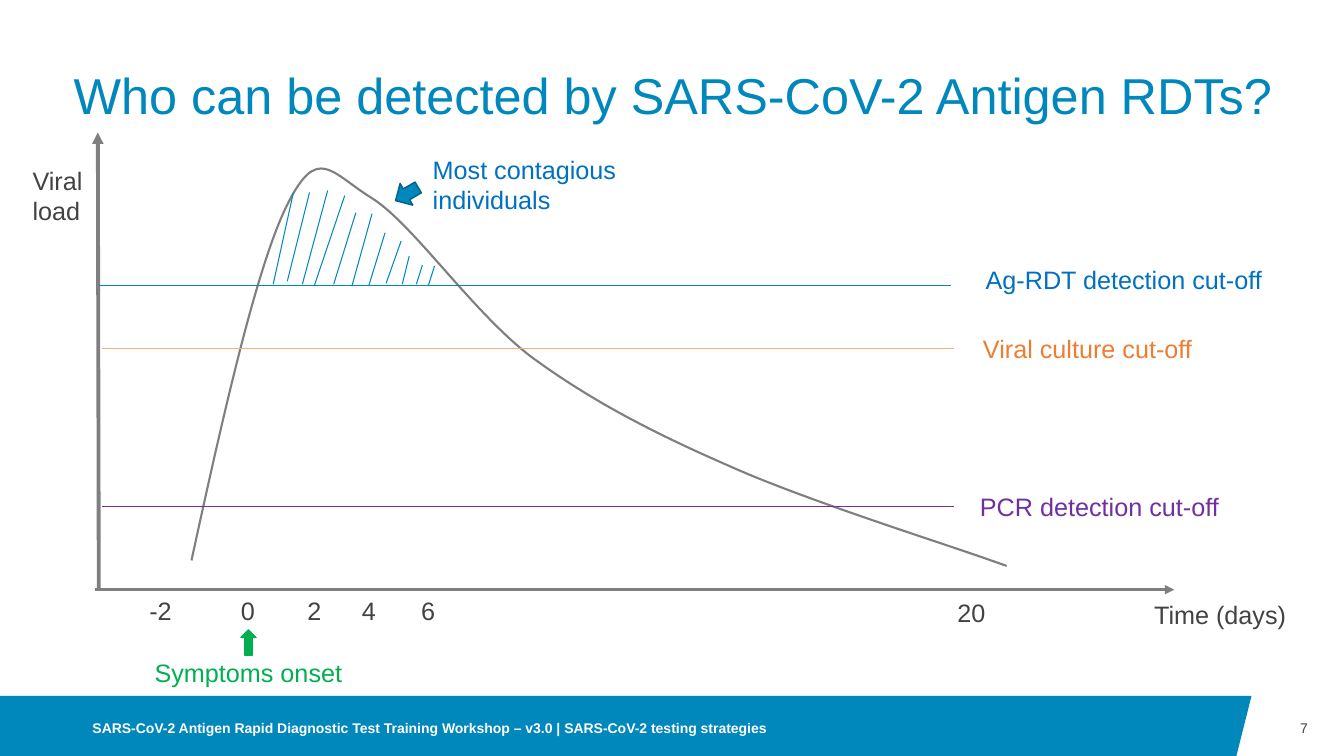
from pptx import Presentation
from pptx.dml.color import RGBColor
from pptx.enum.shapes import MSO_CONNECTOR, MSO_SHAPE
from pptx.enum.text import MSO_ANCHOR as ANCHOR, MSO_AUTO_SIZE, PP_ALIGN as ALIGN
from pptx.oxml.ns import qn
from pptx.util import Inches, Pt
from lxml.etree import SubElement

W, H = Inches(13.333), Inches(7.5)
BLUE, LABEL_BLUE, DARK, GRAY = "0087BC", "0070C0", "424242", "7F7F7F"
GREEN, ORANGE, PURPLE, WHITE = "00B050", "ED7D31", "7030A0", "FFFFFF"

CURVE_BOX = [(14.25, 22.27), (74.93, 74.8)]
CURVE_START = (14.25, 74.13)
CURVE = [
    ((16.65, 54.53), (19.13, 35.07), (21.38, 27.07)),
    ((23.63, 19.07), (24.6, 22.8), (27.6, 26.13)),
    ((30.68, 29.47), (35.1, 41.2), (39.53, 47.2)),
    ((44.03, 53.07), (48.68, 57.33), (54.38, 61.73)),
    ((60.08, 66.27), (70.88, 72.27), (73.73, 74.13)),
    ((76.5, 75.87), (73.8, 74.13), (71.1, 72.53)),
]
HATCHES = [
    (21.83, 25.47, 20.33, 37.6), (23.03, 25.47, 21.38, 37.2),
    (24.38, 25.2, 22.5, 37.6), (25.65, 25.87, 23.4, 37.73),
    (26.48, 28.13, 24.83, 37.6), (27.68, 28.27, 26.18, 37.87),
    (28.65, 30.8, 27.45, 37.73), (29.85, 31.87, 28.73, 37.47),
    (30.45, 33.87, 29.93, 37.6), (31.43, 35.07, 30.98, 37.6),
    (32.33, 35.2, 31.88, 37.73),
]
CUTOFFS = [
    ("Ag-RDT detection cut-off", 7.35, 70.73, 37.73, BLUE, 72.6, 34.27, 22.28, LABEL_BLUE),
    ("Viral culture cut-off", 7.58, 70.95, 46.13, "F4B081", 72.4, 43.4, 17.25, ORANGE),
    ("PCR detection cut-off", 7.58, 71, 66.98, PURPLE, 72.18, 64.27, 19.5, PURPLE),
]
DAYS = [("-2", 10.38, 78.13, 3.75), ("0", 17.18, 78.13, 2.2), ("2", 22.13, 78.13, 2.2),
        ("4", 26.18, 78.13, 2.2), ("6", 30.6, 78.13, 2.2), ("20", 70.5, 78.4, 4.88)]


def rgb(color):
    """Turn a hex string into a colour."""
    return RGBColor.from_string(color)


def pos(x, y):
    """Turn percentages of the slide's width and height into lengths."""
    return round(W * x / 100), round(H * y / 100)


def write(tf, text, size=18, color=DARK, bold=False, align=ALIGN.LEFT,
          anchor=ANCHOR.TOP, inset=True, spacing=None):
    """Fill a text frame with one formatted paragraph."""
    tf.word_wrap, tf.auto_size, tf.vertical_anchor = True, MSO_AUTO_SIZE.NONE, anchor
    tf.margin_left = tf.margin_right = Inches(0.1 if inset else 0)
    tf.margin_top = tf.margin_bottom = Inches(0.05 if inset else 0)
    p = tf.paragraphs[0]
    p.alignment, p.line_spacing = align, spacing
    r = p.add_run()
    r.text = text
    r.font.name, r.font.size, r.font.bold = "Arial", Pt(size), bold
    r.font.color.rgb = rgb(color)


def add_text(s, text, x, y, w, h=5.33, **fmt):
    """Add a text box."""
    write(s.shapes.add_textbox(*pos(x, y), *pos(w, h)).text_frame, text, **fmt)


def add_line(s, x1, y1, x2, y2, color=BLUE, width=0.75, arrow=False):
    """Add a straight line, with an arrowhead at its end if asked."""
    sp = s.shapes.add_connector(MSO_CONNECTOR.STRAIGHT, *pos(x1, y1), *pos(x2, y2))
    sp.line.color.rgb, sp.line.width = rgb(color), Pt(width)
    if arrow:
        SubElement(sp.line._get_or_add_ln(), qn("a:tailEnd"), type="triangle")
    SubElement(sp._element.spPr, qn("a:effectLst"))


def paint(sp, fill, line=None, width=1):
    """Set a shape's fill and outline and drop its shadow."""
    sp.shadow.inherit = False
    sp.fill.solid()
    sp.fill.fore_color.rgb = rgb(fill)
    if line:
        sp.line.color.rgb, sp.line.width = rgb(line), Pt(width)
    else:
        sp.line.fill.background()


def add_outline(s, points, close=True, **look):
    """Add a freeform through the given points."""
    first, *rest = [pos(*pt) for pt in points]
    builder = s.shapes.build_freeform(*first)
    builder.add_line_segments(rest, close=close)
    sp = builder.convert_to_shape()
    paint(sp, **look)
    return sp


def add_curve(s, box, start, segments, **look):
    """Add an open chain of cubic Bézier segments inside a box."""
    sp = add_outline(s, box, close=False, **look)
    outline = next(sp._element.iter(qn("a:path")))
    for step in list(outline):
        outline.remove(step)
    for tag, points in [("a:moveTo", [start])] + [("a:cubicBezTo", seg) for seg in segments]:
        step = SubElement(outline, qn(tag))
        for x, y in (pos(*pt) for pt in points):
            SubElement(step, qn("a:pt"), x=str(x - sp.left), y=str(y - sp.top))


def add_arrow(s, x, y, w, h, angle, fill, line):
    """Add a rotated block arrow."""
    sp = s.shapes.add_shape(MSO_SHAPE.RIGHT_ARROW, *pos(x, y), *pos(w, h))
    sp.rotation = angle
    paint(sp, fill=fill, line=line)


def add_title(s, text):
    """Place and format the title placeholder."""
    sp = s.shapes.title
    sp.left, sp.top = pos(5.48, 2.8)
    sp.width, sp.height = pos(90.6, 13.73)
    write(sp.text_frame, text, size=36, color=BLUE, anchor=ANCHOR.BOTTOM,
          inset=False, spacing=0.9)


def add_footer(s):
    """Add the footer band with its text and the slide number."""
    add_outline(s, [(0, 92.05), (93.12, 92.05), (92, 100), (0, 100)], fill=BLUE)
    add_text(s, "SARS-CoV-2 Antigen Rapid Diagnostic Test Training Workshop – v3.0"
             " | SARS-CoV-2 testing strategies", 6.88, 92.67, 60, 7.33,
             size=10, color=WHITE, bold=True, anchor=ANCHOR.MIDDLE, inset=False)
    add_text(s, "7", 93.12, 92.05, 4.2, 8.4, size=10, align=ALIGN.RIGHT,
             anchor=ANCHOR.MIDDLE, inset=False)


def add_axes(s):
    """Add both axes with their names and day labels."""
    add_line(s, 7.05, 78, 87.38, 78, GRAY, 2.25, arrow=True)
    add_line(s, 7.35, 78.13, 7.28, 17.52, GRAY, 2.75, arrow=True)
    add_text(s, "Time (days)", 85.13, 78.6, 14.85)
    add_text(s, "Viral load", 1.68, 21.2, 7.58, 9.47)
    for day, x, y, w in DAYS:
        add_text(s, day, x, y, w)


def main():
    """Build the slide and save it."""
    prs = Presentation()
    prs.slide_width, prs.slide_height = W, H
    s = prs.slides.add_slide(prs.slide_layouts[5])
    add_title(s, "Who can be detected by SARS-CoV-2 Antigen RDTs?")
    add_footer(s)
    add_curve(s, CURVE_BOX, CURVE_START, CURVE, fill=WHITE, line=GRAY, width=1.5)
    add_axes(s)
    for text, x1, x2, y, line, left, top, w, color in CUTOFFS:
        add_line(s, x1, y, x2, y, line)
        add_text(s, text, left, top, w, color=color)
    for hatch in HATCHES:
        add_line(s, *hatch)
    add_arrow(s, 29.3, 24, 1.95, 3.33, 149.6, BLUE, "006289")
    add_text(s, "Most contagious individuals", 31.46, 19.73, 20.85, 9.47, color=LABEL_BLUE)
    add_arrow(s, 17.55, 84, 1.88, 2, 270, GREEN, GREEN)
    add_text(s, "Symptoms onset", 10.76, 86.27, 15.6, color=GREEN)
    prs.save("out.pptx")


if __name__ == "__main__":
    main()
